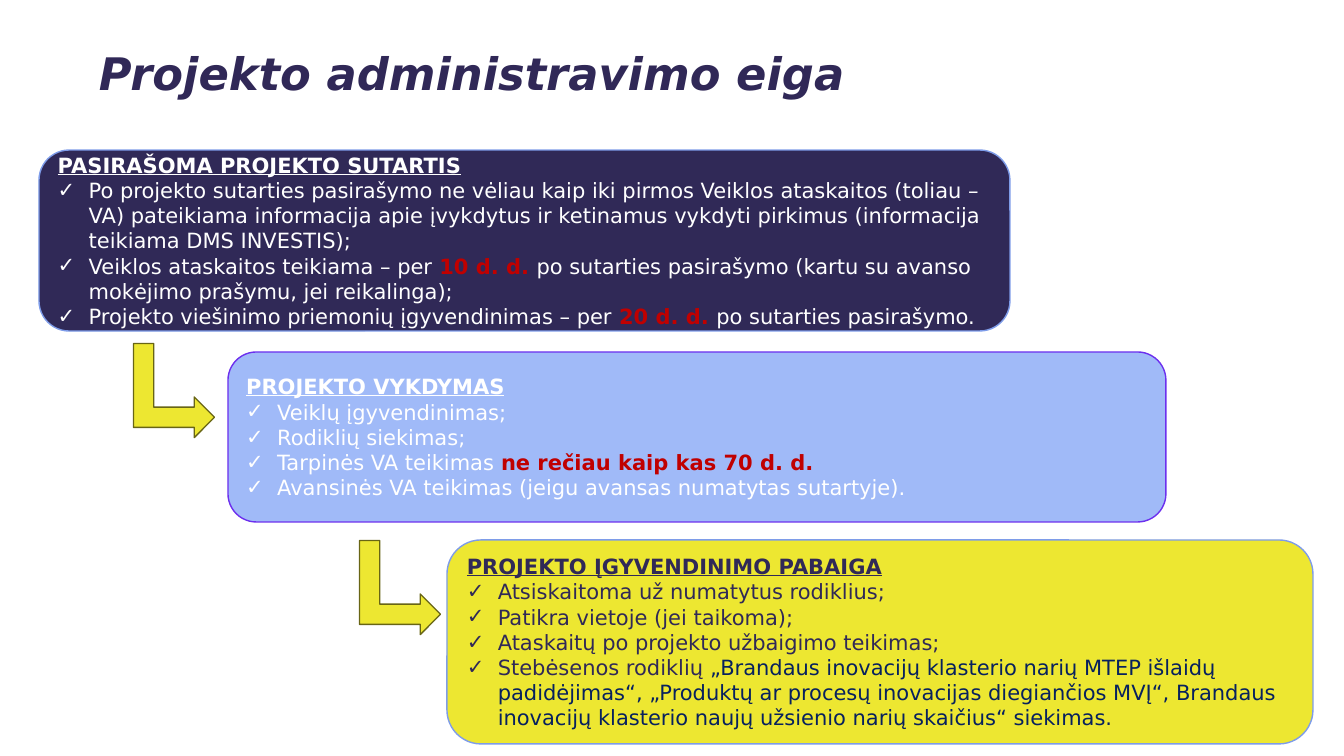
from typing import NamedTuple

from lxml import etree
from pptx import Presentation
from pptx.dml.color import RGBColor
from pptx.enum.shapes import MSO_SHAPE
from pptx.enum.text import MSO_ANCHOR, PP_ALIGN
from pptx.oxml.ns import qn
from pptx.util import Emu, Pt

ROUNDED = MSO_SHAPE.FLOWCHART_ALTERNATE_PROCESS
BENT_ARROW = MSO_SHAPE.BENT_UP_ARROW
MIDDLE, TOP = MSO_ANCHOR.MIDDLE, MSO_ANCHOR.TOP
LEFT = PP_ALIGN.LEFT

FONT = "DejaVu Sans"
TITLE_COLOR = RGBColor(0x30, 0x28, 0x57)
NAVY = RGBColor(0x30, 0x29, 0x57)
INK = RGBColor(0x07, 0x21, 0x5E)
WHITE = RGBColor(0xFF, 0xFF, 0xFF)
RED = RGBColor(0xC0, 0x00, 0x00)
BLUE = RGBColor(0xA0, 0xBA, 0xF8)
BLUE_LINE = RGBColor(0x7E, 0x9C, 0xE9)
VIOLET = RGBColor(0x6C, 0x30, 0xEE)
YELLOW = RGBColor(0xED, 0xE7, 0x31)
OLIVE = RGBColor(0x68, 0x65, 0x15)

INDENT = 31


def px(n: int) -> Emu:
    """Slide pixels (100.8 to the inch) as EMU."""
    return Emu(round(n * 914400 / 100.8))


class Box(NamedTuple):
    left: int
    top: int
    width: int
    height: int


class Stage(NamedTuple):
    box: Box
    fill: RGBColor
    line: RGBColor
    color: RGBColor
    accent: RGBColor
    accent_bold: bool
    heading: str
    items: list[list[str]]  # every second part of an item is accented


STAGES = [
    Stage(Box(39, 150, 971, 181), NAVY, BLUE_LINE, WHITE, RED, True,
          "PASIRAŠOMA PROJEKTO SUTARTIS", [
              ["Po projekto sutarties pasirašymo ne vėliau kaip iki pirmos Veiklos "
               "ataskaitos (toliau – VA) pateikiama informacija apie įvykdytus ir "
               "ketinamus vykdyti pirkimus (informacija teikiama DMS INVESTIS);"],
              ["Veiklos ataskaitos teikiama – per ", "10 d. d. ",
               "po sutarties pasirašymo (kartu su avanso mokėjimo prašymu, "
               "jei reikalinga);"],
              ["Projekto viešinimo priemonių įgyvendinimas – per ", "20 d. d. ",
               "po sutarties pasirašymo."],
          ]),
    Stage(Box(228, 352, 938, 170), BLUE, VIOLET, WHITE, RED, True,
          "PROJEKTO VYKDYMAS", [
              ["Veiklų įgyvendinimas;"],
              ["Rodiklių siekimas;"],
              ["Tarpinės VA teikimas ", "ne rečiau kaip kas 70 d. d."],
              ["Avansinės VA teikimas (jeigu avansas numatytas sutartyje)."],
          ]),
    Stage(Box(447, 540, 866, 204), YELLOW, BLUE_LINE, NAVY, INK, False,
          "PROJEKTO ĮGYVENDINIMO PABAIGA", [
              ["Atsiskaitoma už numatytus rodiklius;"],
              ["Patikra vietoje (jei taikoma);"],
              ["Ataskaitų po projekto užbaigimo teikimas;"],
              ["Stebėsenos rodiklių ",
               "„Brandaus inovacijų klasterio narių MTEP išlaidų padidėjimas“, "
               "„Produktų ar procesų inovacijas diegiančios MVĮ“, Brandaus "
               "inovacijų klasterio naujų užsienio narių skaičius“ siekimas."],
          ]),
]
ARROWS = [Box(127, 350, 94, 81), Box(353, 547, 94, 81)]


def add_run(p, text: str, size: int, color: RGBColor, bold: bool = False):
    r = p.add_run()
    r.text = text
    r.font.name = FONT
    r.font.size = Pt(size)
    r.font.bold = bold
    r.font.color.rgb = color
    return r


def add_check(p) -> None:
    """Hanging check-mark bullet."""
    pPr = p._p.get_or_add_pPr()
    pPr.set("marL", str(px(INDENT)))
    pPr.set("indent", str(-px(INDENT)))
    etree.SubElement(pPr, qn("a:buFont")).set("typeface", FONT)
    etree.SubElement(pPr, qn("a:buChar")).set("char", "✓")


def add_block(slide, kind: int, box: Box, fill: RGBColor, line: RGBColor):
    s = slide.shapes.add_shape(kind, *map(px, box))
    s.shadow.inherit = False
    s.fill.solid()
    s.fill.fore_color.rgb = fill
    s.line.color.rgb = line
    s.line.width = Pt(1)
    return s


def add_title(slide, text: str) -> None:
    tf = slide.shapes.add_textbox(*map(px, Box(89, 28, 1203, 137))).text_frame
    tf.word_wrap = True
    tf.vertical_anchor = TOP
    tf.margin_top = px(18)
    add_run(tf.paragraphs[0], text, 32, TITLE_COLOR, True).font.italic = True


def add_stage(slide, stage: Stage) -> None:
    s = add_block(slide, ROUNDED, stage.box, stage.fill, stage.line)
    tf = s.text_frame
    tf.word_wrap = True
    tf.vertical_anchor = MIDDLE
    p = tf.paragraphs[0]
    p.alignment = LEFT
    add_run(p, stage.heading, 15, stage.color, True).font.underline = True
    for item in stage.items:
        p = tf.add_paragraph()
        p.alignment = LEFT
        add_check(p)
        for i, part in enumerate(item):
            accented = i % 2 == 1
            add_run(p, part, 15, stage.accent if accented else stage.color,
                    accented and stage.accent_bold)


def main() -> None:
    prs = Presentation()
    prs.slide_width, prs.slide_height = px(1344), px(756)
    slide = prs.slides.add_slide(prs.slide_layouts[6])

    # Title
    add_title(slide, "Projekto administravimo eiga")

    # Project stages
    for stage in STAGES:
        add_stage(slide, stage)

    # Arrows from stage to stage
    for box in ARROWS:
        add_block(slide, BENT_ARROW, box, YELLOW, OLIVE).rotation = 90

    prs.save("out.pptx")


if __name__ == "__main__":
    main()
